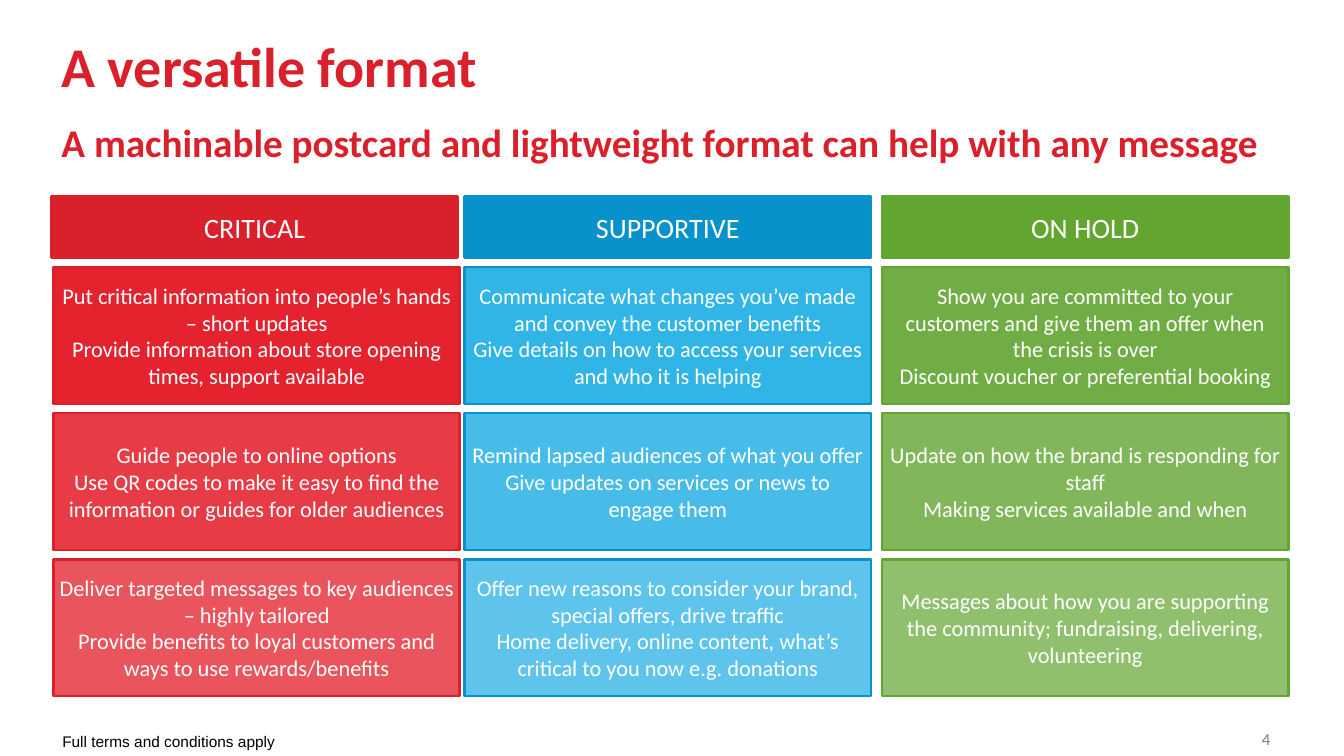
from lxml import etree
from pptx import Presentation
from pptx.dml.color import RGBColor
from pptx.enum.shapes import MSO_SHAPE
from pptx.enum.text import MSO_ANCHOR, PP_ALIGN
from pptx.oxml.ns import qn
from pptx.util import Cm, Pt

RECTANGLE = MSO_SHAPE.RECTANGLE
MIDDLE = MSO_ANCHOR.MIDDLE
CENTER = PP_ALIGN.CENTER

WHITE = RGBColor(0xFF, 0xFF, 0xFF)
BLACK = RGBColor(0x00, 0x00, 0x00)
GREY = RGBColor(0x80, 0x80, 0x80)
RED = RGBColor(0xDA, 0x20, 0x2A)
BRIGHT_RED = RGBColor(0xE2, 0x0C, 0x18)
BLUE = RGBColor(0x08, 0x92, 0xCB)
BRIGHT_BLUE = RGBColor(0x1B, 0xAC, 0xE4)
GREEN = RGBColor(0x62, 0xA5, 0x31)

COLUMN_WIDTH = 10.24
HEADER_TOP, HEADER_HEIGHT = 4.95, 1.55
CARD_TOP, CARD_HEIGHT, CARD_PITCH = 6.73, 3.45, 3.68
CARD_OPACITIES = (90, 80, 70)

# Heading, header left, card left, main colour, card colour, card paragraphs
COLUMNS = [
    ("CRITICAL", 1.3, 1.35, RED, BRIGHT_RED, [
        ["Put critical information into people’s hands – short updates",
         "Provide information about store opening times, support available"],
        ["Guide people to online options",
         "Use QR codes to make it easy to find the information or guides for older audiences"],
        ["Deliver targeted messages to key audiences – highly tailored",
         "Provide benefits to loyal customers and ways to use rewards/benefits"],
    ]),
    ("SUPPORTIVE", 11.71, 11.71, BLUE, BRIGHT_BLUE, [
        ["Communicate what changes you’ve made and convey the customer benefits",
         "Give details on how to access your services and who it is helping"],
        ["Remind lapsed audiences of what you offer",
         "Give updates on services or news to engage them"],
        ["Offer new reasons to consider your brand, special offers, drive traffic",
         "Home delivery, online content, what’s critical to you now e.g. donations"],
    ]),
    ("ON HOLD", 22.23, 22.23, GREEN, GREEN, [
        ["Show you are committed to your customers and give them an offer when the crisis is over",
         "Discount voucher or preferential booking"],
        ["Update on how the brand is responding for staff",
         "Making services available and when"],
        ["Messages about how you are supporting the community; fundraising, delivering, volunteering"],
    ]),
]


def add_run(paragraph, text, size, color, font="Calibri", bold=False):
    run = paragraph.add_run()
    run.text = text
    run.font.size = Pt(size)
    run.font.name = font
    run.font.bold = bold
    run.font.color.rgb = color


def set_margins(frame, horizontal, vertical):
    frame.margin_left = frame.margin_right = Cm(horizontal)
    frame.margin_top = frame.margin_bottom = Cm(vertical)


def set_opacity(shape, percent):
    color = shape.fill._xPr.find(qn("a:solidFill"))[0]
    etree.SubElement(color, qn("a:alpha"), val=str(percent * 1000))


def add_box(slide, left, top, height, fill, line, texts, size):
    """Add a column-wide rectangle with one centred paragraph per text."""
    box = slide.shapes.add_shape(RECTANGLE, Cm(left), Cm(top), Cm(COLUMN_WIDTH), Cm(height))
    box.shadow.inherit = False
    box.fill.solid()
    box.fill.fore_color.rgb = fill
    box.line.color.rgb = line
    box.line.width = Pt(2)
    frame = box.text_frame
    frame.word_wrap = True
    frame.vertical_anchor = MIDDLE
    set_margins(frame, 0.15, 0.13)
    for index, text in enumerate(texts):
        paragraph = frame.add_paragraph() if index else frame.paragraphs[0]
        paragraph.alignment = CENTER
        add_run(paragraph, text, size, WHITE)
    return box


def add_column(slide, heading, header_left, card_left, color, card_color, cards):
    add_box(slide, header_left, HEADER_TOP, HEADER_HEIGHT, color, color, [heading], 20)
    for row, (texts, opacity) in enumerate(zip(cards, CARD_OPACITIES)):
        top = CARD_TOP + row * CARD_PITCH
        card = add_box(slide, card_left, top, CARD_HEIGHT, card_color, color, texts, 16)
        set_opacity(card, opacity)


def add_text_frame(slide, left, top, width, height, wrap=True):
    """Add a text box without margins and return its text frame."""
    frame = slide.shapes.add_textbox(Cm(left), Cm(top), Cm(width), Cm(height)).text_frame
    frame.word_wrap = wrap
    set_margins(frame, 0, 0)
    return frame


def add_title(slide):
    paragraph = add_text_frame(slide, 1.55, 0.79, 30.76, 3.23).paragraphs[0]
    paragraph.line_spacing = Pt(48)
    add_run(paragraph, "A versatile format", 40, RED, bold=True)
    paragraph.add_line_break()
    add_run(paragraph, "A machinable postcard and lightweight format can help with any message",
            28, RED, bold=True)


def add_footer(slide):
    terms = add_text_frame(slide, 1.32, 18.31, 5.92, 0.74, wrap=False)
    set_margins(terms, 0.25, 0.13)
    add_run(terms.paragraphs[0], "Full terms and conditions apply", 11, BLACK, font="Arial")
    page_number = add_text_frame(slide, 31.8, 18.36, 1.8, 0.66)
    add_run(page_number.paragraphs[0], "4", 12, GREY)


def main():
    presentation = Presentation()
    presentation.slide_width = Cm(33.87)
    presentation.slide_height = Cm(19.05)
    slide = presentation.slides.add_slide(presentation.slide_layouts[6])
    add_title(slide)
    for column in COLUMNS:
        add_column(slide, *column)
    add_footer(slide)
    presentation.save("out.pptx")


if __name__ == "__main__":
    main()
